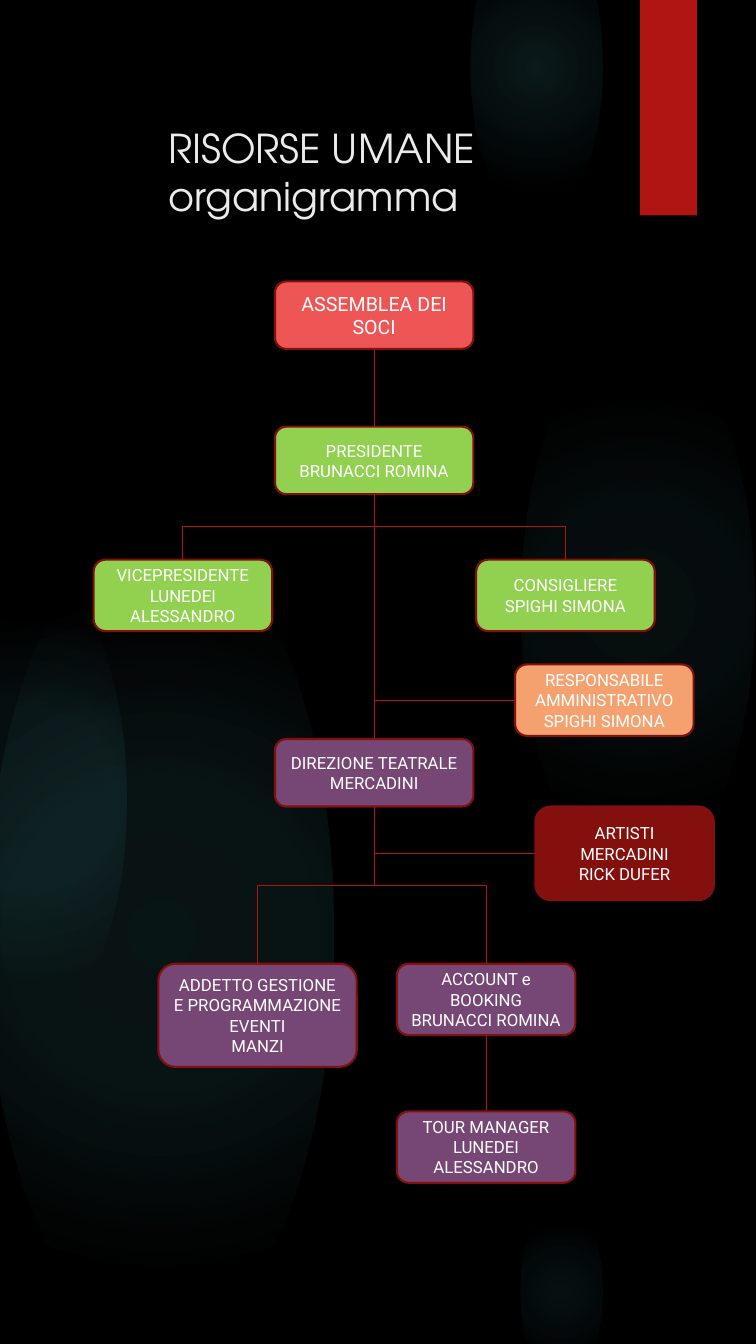
import pptx
import pptx.util
import pptx.oxml
import pptx.oxml.ns
from pptx.dml.color import RGBColor
from pptx.enum.shapes import MSO_CONNECTOR, MSO_SHAPE
from pptx.enum.text import MSO_ANCHOR, PP_ALIGN
from pptx.util import Cm, Pt

BLACK = RGBColor(0x00, 0x00, 0x00)
WHITE = RGBColor(0xFF, 0xFF, 0xFF)
TITLE_GREY = RGBColor(0xEB, 0xEB, 0xEB)
RED = RGBColor(0xB0, 0x15, 0x13)
OUTLINE = RGBColor(0x82, 0x10, 0x0E)
DARK_RED = RGBColor(0x84, 0x10, 0x0E)
CORAL = RGBColor(0xED, 0x56, 0x54)
GREEN = RGBColor(0x92, 0xD0, 0x50)
ORANGE = RGBColor(0xF4, 0xA1, 0x6F)
PURPLE = RGBColor(0x76, 0x46, 0x74)
TEAL = RGBColor(0x50, 0xB9, 0xC1)

SPINE = 9.43  # centre line of the chart, cm
BRANCH = 4.82  # distance of the side roles from the spine, cm
WIDE, NARROW = (5, 1.7), (4.5, 1.8)
TOP, LEFT, BOTTOM = 0, 1, 2  # connection sites of a box

# left, top, width, height in cm, then (position, opacity) stops in percent
GLOWS = [
    (13.13, 8.28, 5.87, 13.92, [(0, 7), (36, 6), (69, 0)]),
    (11.86, -2.26, 3.33, 7.9, [(0, 14), (36, 7), (73, 0)]),
    (13.13, 30.1, 2.06, 4.9, [(0, 9), (36, 5), (66, 0)]),
    (-0.33, 13.18, 8.74, 20.7, [(0, 11), (36, 10), (75, 0)]),
    (-1.75, 14.3, 4.93, 11.66, [(0, 8), (36, 8), (72, 0)]),
]


def add_glow(slide, left, top, width, height, stops):
    """Ellipse that fades out from its centre."""
    sp = slide.shapes.add_shape(MSO_SHAPE.OVAL, Cm(left), Cm(top), Cm(width), Cm(height))
    sp.shadow.inherit = False
    sp.line.fill.background()
    sp.fill.gradient()
    gs = "".join(
        f'<a:gs pos="{pos * 1000}"><a:srgbClr val="{TEAL}">'
        f'<a:alpha val="{alpha * 1000}"/></a:srgbClr></a:gs>'
        for pos, alpha in stops)
    grad = pptx.oxml.parse_xml(
        f'<a:gradFill {pptx.oxml.ns.nsdecls("a")} rotWithShape="1"><a:gsLst>{gs}</a:gsLst>'
        '<a:path path="circle"><a:fillToRect l="50000" t="50000" r="50000" b="50000"/></a:path>'
        '</a:gradFill>')
    spPr = sp._element.spPr
    spPr.replace(spPr.find(pptx.oxml.ns.qn("a:gradFill")), grad)


def add_ribbon(slide):
    sp = slide.shapes.add_shape(MSO_SHAPE.RECTANGLE, Cm(16.13), 0, Cm(1.43), Cm(5.43))
    sp.shadow.inherit = False
    sp.fill.solid()
    sp.fill.fore_color.rgb = RED
    sp.line.fill.background()


def add_title(slide, text):
    tf = slide.shapes.add_textbox(Cm(3.99), Cm(3), Cm(13), Cm(2.49)).text_frame
    tf.word_wrap = True
    p = tf.paragraphs[0]
    p.text = text
    p.font.name = "TeX Gyre Adventor"
    p.font.size = Pt(28.4)
    p.font.color.rgb = TITLE_GREY


def add_role(slide, center, top, size, fill, text, font_size=12):
    """Rounded box centred on a given x."""
    width, height = size
    sp = slide.shapes.add_shape(MSO_SHAPE.FLOWCHART_ALTERNATE_PROCESS,
                                Cm(center - width / 2), Cm(top), Cm(width), Cm(height))
    sp.shadow.inherit = False
    sp.fill.solid()
    sp.fill.fore_color.rgb = fill
    sp.line.color.rgb = OUTLINE
    sp.line.width = Pt(1.5)
    tf = sp.text_frame
    tf.word_wrap = True
    tf.vertical_anchor = MSO_ANCHOR.MIDDLE
    tf.text = text
    for p in tf.paragraphs:
        p.alignment = PP_ALIGN.CENTER
        p.font.name = "Roboto"
        p.font.size = Pt(font_size)
        p.font.color.rgb = WHITE
    return sp


def add_line(slide, kind=MSO_CONNECTOR.STRAIGHT):
    cxn = slide.shapes.add_connector(kind, 0, 0, 0, 0)
    cxn.line.color.rgb = RED
    cxn.line.width = Pt(0.75)
    cxn._element.spPr.append(
        pptx.oxml.parse_xml(f'<a:effectLst {pptx.oxml.ns.nsdecls("a")}/>'))
    return cxn


def link_down(slide, upper, lower, kind=MSO_CONNECTOR.STRAIGHT):
    cxn = add_line(slide, kind)
    cxn.begin_connect(upper, BOTTOM)
    cxn.end_connect(lower, TOP)
    return cxn


def link_branch(slide, upper, lower):
    """Elbow that leaves downwards, so its frame is turned by a quarter."""
    cxn = link_down(slide, upper, lower, MSO_CONNECTOR.ELBOW)
    x1, y1 = upper.left + upper.width // 2, upper.top + upper.height
    x2, y2 = lower.left + lower.width // 2, lower.top
    width, height = y2 - y1, abs(x2 - x1)
    cxn.left, cxn.top = (x1 + x2 - width) // 2, (y1 + y2 - height) // 2
    cxn.width, cxn.height = width, height
    xfrm = cxn._element.spPr.xfrm
    xfrm.flipV = False
    xfrm.flipH = x2 > x1
    xfrm.rot = 270 if x2 > x1 else 90


def link_to_spine(slide, box):
    cxn = add_line(slide)
    cxn.begin_connect(box, LEFT)
    cxn.end_x, cxn.end_y = Cm(SPINE), box.top + box.height // 2


def main():
    prs = pptx.Presentation()
    prs.slide_width, prs.slide_height = Cm(19.05), Cm(33.86)
    slide = prs.slides.add_slide(prs.slide_layouts[6])

    # Backdrop
    slide.background.fill.solid()
    slide.background.fill.fore_color.rgb = BLACK
    for *frame, stops in GLOWS:
        add_glow(slide, *frame, stops)
    add_ribbon(slide)
    add_title(slide, "RISORSE UMANE\vorganigramma")

    # Roles
    assembly = add_role(slide, SPINE, 7.09, WIDE, CORAL, "ASSEMBLEA DEI SOCI", 14)
    president = add_role(slide, SPINE, 10.75, WIDE, GREEN, "PRESIDENTE\nBRUNACCI ROMINA")
    vice = add_role(slide, SPINE - BRANCH, 14.1, NARROW, GREEN,
                    "VICEPRESIDENTE LUNEDEI ALESSANDRO")
    adviser = add_role(slide, SPINE + BRANCH, 14.1, NARROW, GREEN, "CONSIGLIERE SPIGHI SIMONA")
    admin = add_role(slide, 15.23, 16.74, NARROW, ORANGE,
                     "RESPONSABILE AMMINISTRATIVO SPIGHI SIMONA")
    direction = add_role(slide, SPINE, 18.62, WIDE, PURPLE, "DIREZIONE TEATRALE MERCADINI")
    artists = add_role(slide, 15.74, 20.32, (4.5, 2.36), DARK_RED,
                       "ARTISTI\nMERCADINI\nRICK DUFER")
    events = add_role(slide, 6.49, 24.28, (5, 2.6), PURPLE,
                      "ADDETTO GESTIONE E PROGRAMMAZIONE EVENTI\nMANZI")
    account = add_role(slide, 12.25, 24.28, NARROW, PURPLE, "ACCOUNT e BOOKING BRUNACCI ROMINA")
    tour = add_role(slide, 12.25, 28, NARROW, PURPLE, "TOUR MANAGER LUNEDEI ALESSANDRO")

    # Links
    for upper, lower in [(assembly, president), (president, direction), (account, tour)]:
        link_down(slide, upper, lower)
    for upper, lower in [(president, vice), (president, adviser),
                         (direction, events), (direction, account)]:
        link_branch(slide, upper, lower)
    for box in (admin, artists):
        link_to_spine(slide, box)

    prs.save("out.pptx")


if __name__ == "__main__":
    main()
